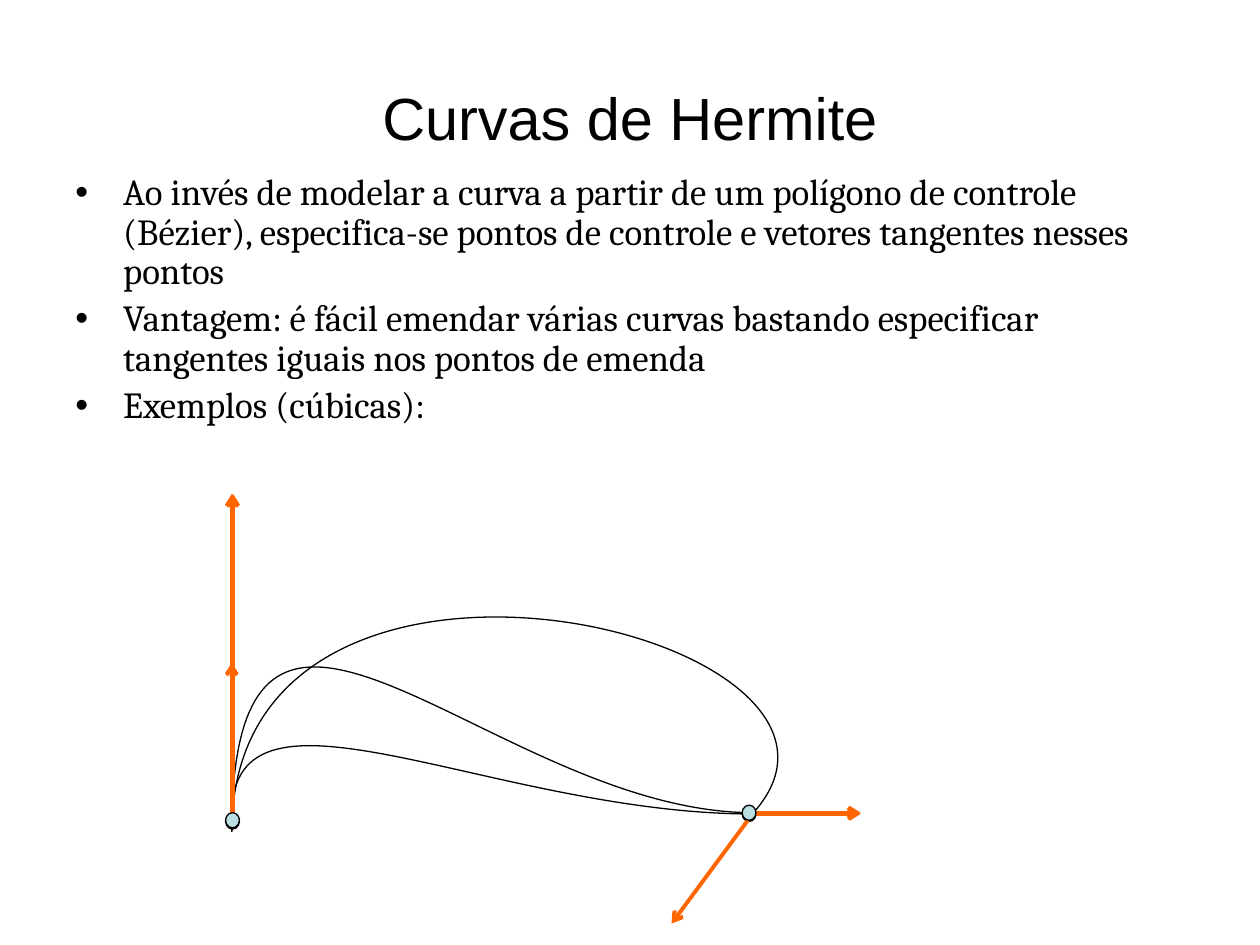
from dataclasses import dataclass

from lxml.etree import SubElement as Sub
from pptx import Presentation
from pptx.dml.color import RGBColor as Rgb
from pptx.enum.shapes import MSO_CONNECTOR as Link, MSO_SHAPE as Shape
from pptx.enum.text import MSO_ANCHOR as Anchor, PP_ALIGN as Align
from pptx.oxml.ns import qn
from pptx.util import Inches, Pt

Point = tuple[float, float]

INK = {"black": "000000", "vector": "FF6600", "dot": "BBE0E3"}
POINTS = [
    "Ao invés de modelar a curva a partir de um polígono de controle (Bézier), "
    "especifica-se pontos de controle e vetores tangentes nesses pontos",
    "Vantagem: é fácil emendar várias curvas bastando especificar "
    "tangentes iguais nos pontos de emenda",
    "Exemplos (cúbicas):",
]
DOT_W, DOT_H = 0.11, 0.12


@dataclass
class Curve:
    ends: tuple[Point, Point, Point, Point]
    arrows: list[tuple[Point, Point]]
    dots: list[Point]


CURVES = [
    Curve(
        ((1.84, 6.46), (1.85, 5.24), (3.91, 6.46), (5.98, 6.46)),
        [((5.98, 6.46), (6.83, 6.46)), ((1.84, 6.46), (1.84, 5.26))],
        [(1.79, 6.46), (5.89, 6.4)],
    ),
    Curve(
        ((1.84, 6.6), (1.84, 3.75), (3.91, 6.45), (5.98, 6.45)),
        [((5.98, 6.45), (6.83, 6.45)), ((1.84, 6.45), (1.84, 3.92))],
        [],
    ),
    Curve(
        ((1.84, 6.6), (1.84, 3.75), (7.25, 5.03), (5.98, 6.45)),
        [((5.98, 6.45), (5.33, 7.33)), ((1.85, 6.45), (1.85, 3.92))],
        [(1.79, 6.45), (5.89, 6.39)],
    ),
]


def tint(name: str) -> Rgb:
    """Return a named colour."""
    return Rgb.from_string(INK[name])


def pen(shape, name: str, width: float) -> None:
    """Set the colour and width of a line."""
    shape.line.color.rgb = tint(name)
    shape.line.width = Pt(width)


def add_box(slide, top: float, high: float):
    """Add a wrapped text frame across the slide."""
    box = slide.shapes.add_textbox(Inches(0.5), Inches(top), Inches(9), Inches(high))
    box.text_frame.word_wrap = True
    return box.text_frame


def add_run(para, text: str, font: str, size: float) -> None:
    """Add one black run."""
    run = para.add_run()
    run.text = text
    run.font.name = font
    run.font.size = Pt(size)
    run.font.color.rgb = tint("black")


def add_title(slide) -> None:
    """Add the centred title."""
    frame = add_box(slide, 0.3, 1.25)
    frame.vertical_anchor = Anchor.MIDDLE
    para = frame.paragraphs[0]
    para.alignment = Align.CENTER
    add_run(para, "Curvas de Hermite", "Arial", 34)


def add_list(slide) -> None:
    """Add the bulleted text."""
    frame = add_box(slide, 1.33, 2.25)
    for i, text in enumerate(POINTS):
        para = frame.add_paragraph() if i else frame.paragraphs[0]
        para.line_spacing = 0.9
        para.space_before = Pt(4.2)
        props = para._p.get_or_add_pPr()
        props.set("marL", str(Inches(0.38)))
        props.set("indent", str(-Inches(0.38)))
        Sub(props, qn("a:buFont"), typeface="Arial")
        Sub(props, qn("a:buChar"), char="•")
        add_run(para, text, "Cambria", 21)


def add_bend(slide, ends: tuple[Point, ...]) -> None:
    """Add a cubic curve from its four control points."""
    first, *rest = [(Inches(x), Inches(y)) for x, y in ends]
    maker = slide.shapes.build_freeform(*first)
    maker.add_line_segments(rest, close=False)
    shape = maker.convert_to_shape()
    shape.shadow.inherit = False
    shape.fill.background()
    pen(shape, "black", 0.75)
    track = shape._element.spPr.find(".//" + qn("a:path"))
    cubic = Sub(track, qn("a:cubicBezTo"))
    for step in track.findall(qn("a:lnTo")):
        cubic.append(step[0])
        track.remove(step)


def add_arrow(slide, tail: Point, tip: Point) -> None:
    """Add a tangent vector."""
    spots = [Inches(v) for v in (*tail, *tip)]
    line = slide.shapes.add_connector(Link.STRAIGHT, *spots)
    pen(line, "vector", 2.25)
    Sub(line.line._get_or_add_ln(), qn("a:tailEnd"), type="arrow")
    Sub(line._element.spPr, qn("a:effectLst"))


def add_dot(slide, left: float, top: float) -> None:
    """Add a control point."""
    spots = [Inches(v) for v in (left, top, DOT_W, DOT_H)]
    dot = slide.shapes.add_shape(Shape.OVAL, *spots)
    dot.shadow.inherit = False
    dot.fill.solid()
    dot.fill.fore_color.rgb = tint("dot")
    pen(dot, "black", 0.75)


def main() -> None:
    """Build and save the slide."""
    deck = Presentation()
    deck.slide_width, deck.slide_height = Inches(10), Inches(7.5)
    slide = deck.slides.add_slide(deck.slide_layouts[6])
    add_title(slide)
    add_list(slide)
    for curve in CURVES:
        add_bend(slide, curve.ends)
        for tail, tip in curve.arrows:
            add_arrow(slide, tail, tip)
        for left, top in curve.dots:
            add_dot(slide, left, top)
    deck.save("out.pptx")


if __name__ == "__main__":
    main()
